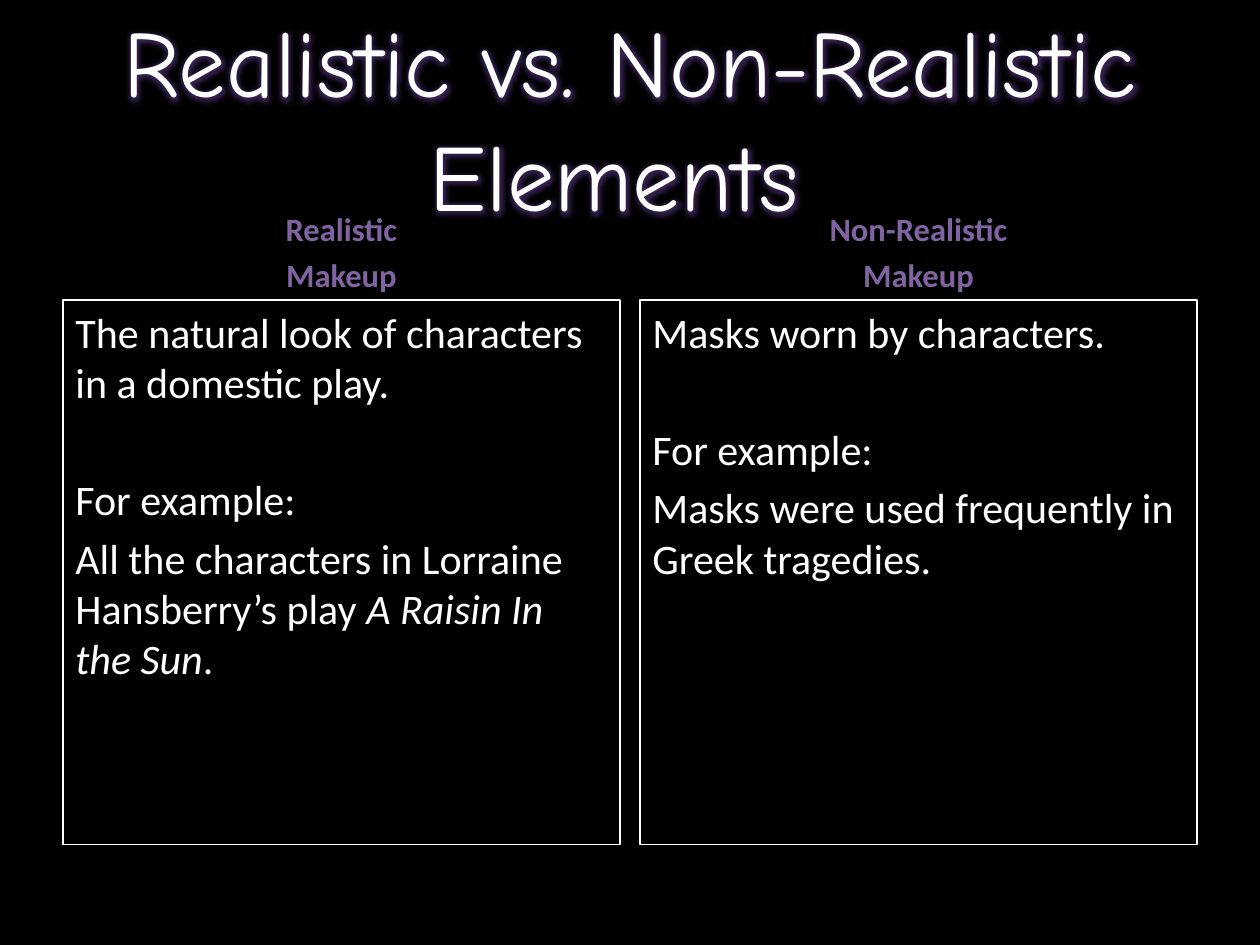
from lxml.etree import SubElement
from pptx import Presentation
from pptx.dml.color import RGBColor
from pptx.enum.shapes import MSO_SHAPE
from pptx.enum.text import MSO_ANCHOR, PP_ALIGN
from pptx.oxml.ns import qn
from pptx.util import Inches, Pt

COLORS = {"black": "000000", "white": "FFFFFF", "purple": "8064A2", "glow": "8050C0"}
COLUMN_W = 4.42
SECTION_GAP = 38  # points before the example

# Each column: left edge, heading lines, body paragraphs of (runs, space before)
COLUMNS = [
    (0.5, ["Realistic", "Makeup"], [
        (["The natural look of characters in a domestic play."], 4.8),
        (["For example:"], SECTION_GAP),
        (["All the characters in Lorraine Hansberry’s play ",
          ("A Raisin In the Sun", True), "."], 4.8),
    ]),
    (5.08, ["Non-Realistic", "Makeup"], [
        (["Masks worn by characters."], 4.8),
        (["For example:"], SECTION_GAP),
        (["Masks were used frequently in Greek tragedies."], 4.8),
    ]),
]


def rgb(name):
    return RGBColor.from_string(COLORS[name])


def write(p, text, size=24, font="Calibri", color="white", bold=False, italic=False):
    r = p.add_run()
    r.text = text
    r.font.size = Pt(size)
    r.font.name = font
    r.font.bold = bold
    r.font.italic = italic
    r.font.color.rgb = rgb(color)
    return r


def set_frame(sp, anchor):
    tf = sp.text_frame
    tf.word_wrap = True
    tf.vertical_anchor = anchor
    return tf


def add_paragraph(tf, index, align, before=0):
    p = tf.add_paragraph() if index else tf.paragraphs[0]
    p.alignment = align
    p.space_before = Pt(before)
    return p


def add_glow(r, radius, alpha):
    fill = r.font._element.find(qn("a:solidFill"))
    effects = fill.makeelement(qn("a:effectLst"))
    fill.addnext(effects)
    glow = SubElement(effects, qn("a:glow"), rad=str(Inches(radius)))
    color = SubElement(glow, qn("a:srgbClr"), val=COLORS["glow"])
    SubElement(color, qn("a:alpha"), val=str(alpha * 1000))


def add_title(s, text):
    sp = s.shapes.add_textbox(Inches(0.5), Inches(0.3), Inches(9), Inches(1.25))
    tf = set_frame(sp, MSO_ANCHOR.MIDDLE)
    p = add_paragraph(tf, 0, PP_ALIGN.CENTER)
    add_glow(write(p, text, size=54, font="Comic Neue"), radius=0.11, alpha=40)


def add_heading(s, left, lines):
    sp = s.shapes.add_textbox(Inches(left), Inches(1.68), Inches(COLUMN_W), Inches(0.7))
    tf = set_frame(sp, MSO_ANCHOR.BOTTOM)
    for i, line in enumerate(lines):
        p = add_paragraph(tf, i, PP_ALIGN.CENTER, before=3.7)
        write(p, line, size=18.6, color="purple", bold=True)


def add_body(s, left, paragraphs):
    sp = s.shapes.add_shape(MSO_SHAPE.RECTANGLE, Inches(left), Inches(2.38),
                            Inches(COLUMN_W), Inches(4.32))
    sp.shadow.inherit = False
    sp.fill.background()
    sp.line.color.rgb = rgb("white")
    sp.line.width = Pt(0.75)
    tf = set_frame(sp, MSO_ANCHOR.TOP)
    for i, (runs, before) in enumerate(paragraphs):
        p = add_paragraph(tf, i, PP_ALIGN.LEFT, before)
        for run in runs:
            text, italic = (run, False) if isinstance(run, str) else run
            write(p, text, italic=italic)


def main():
    prs = Presentation()
    prs.slide_width, prs.slide_height = Inches(10), Inches(7.5)
    s = prs.slides.add_slide(prs.slide_layouts[6])
    s.background.fill.solid()
    s.background.fill.fore_color.rgb = rgb("black")

    # Two columns, then the title on top
    for left, heading, paragraphs in COLUMNS:
        add_heading(s, left, heading)
        add_body(s, left, paragraphs)
    add_title(s, "Realistic vs. Non-Realistic Elements ")

    prs.save("out.pptx")


if __name__ == "__main__":
    main()
